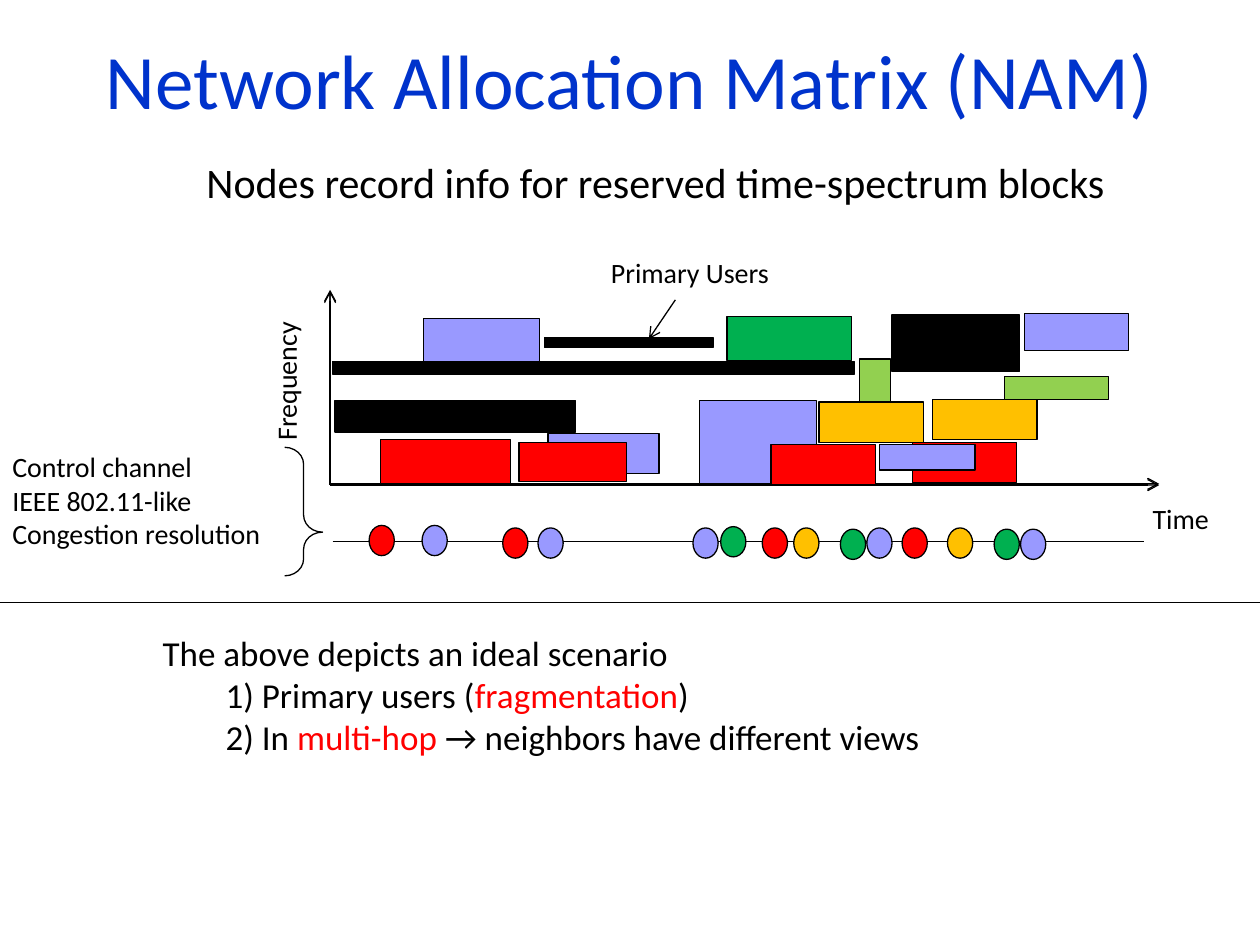
from dataclasses import dataclass

from lxml.etree import SubElement as Sub
from pptx import Presentation as Deck
from pptx.dml.color import RGBColor as Rgb
from pptx.enum.shapes import MSO_CONNECTOR as Link, MSO_SHAPE as Kind
from pptx.enum.text import MSO_ANCHOR as Anchor, MSO_AUTO_SIZE as Fit, PP_ALIGN as Align
from pptx.oxml.ns import qn
from pptx.util import Inches, Pt

HUES = {
    "black": "000000", "blue": "0033CC", "red": "FF0000", "violet": "9999FF",
    "green": "00B050", "lime": "92D050", "gold": "FFC000",
}
PEN = 0.75
FONT = "Calibri"


@dataclass
class Block:
    hue: str
    x: float
    y: float
    w: float
    h: float


@dataclass
class Node:
    hue: str
    x: float
    y: float = 4.19


@dataclass
class Line:
    x1: float
    y1: float
    x2: float
    y2: float
    head: bool = False


@dataclass
class Label:
    lines: list
    x: float
    y: float
    w: float
    h: float
    size: int = 16
    wrap: bool = False
    turn: int = 0


LINES = [
    Line(0, 4.78, 10, 4.78),
    *(Line(2.62, y, *end, True) for y in (3.85, 3.84)
      for end in ((9.2, y), (2.62, y - 1.54))),
    Line(2.64, 4.3, 9.08, 4.3),
]
POINTER = Line(5.36, 2.38, 5.15, 2.69, True)

BLOCKS = [
    Block("red", 3.02, 3.49, 1.03, 0.35),
    Block("violet", 3.36, 2.53, 0.92, 0.34),
    Block("black", 2.66, 3.18, 1.91, 0.25),
    Block("violet", 4.35, 3.44, 0.88, 0.32),
    Block("violet", 5.55, 3.18, 0.93, 0.66),
    Block("green", 5.77, 2.51, 0.99, 0.35),
    Block("gold", 6.5, 3.19, 0.83, 0.32),
    Block("lime", 6.82, 2.85, 0.25, 0.34),
    Block("red", 7.24, 3.51, 0.83, 0.32),
    Block("gold", 7.4, 3.17, 0.83, 0.32),
    Block("violet", 8.13, 2.49, 0.83, 0.29),
    Block("lime", 7.97, 2.99, 0.83, 0.18),
    Block("black", 2.64, 2.87, 4.14, 0.1),
    Block("black", 4.32, 2.68, 1.34, 0.08),
    Block("black", 7.08, 2.5, 1.01, 0.45),
    Block("red", 4.12, 3.51, 0.85, 0.31),
    Block("violet", 6.98, 3.53, 0.76, 0.2),
    Block("red", 6.12, 3.53, 0.83, 0.32),
]

NODES = [
    Node("red", 2.93, 4.17), Node("violet", 3.35, 4.17), Node("red", 3.99),
    Node("violet", 4.27), Node("violet", 5.5), Node("green", 5.72, 4.18),
    Node("red", 6.05), Node("gold", 6.3), Node("green", 6.67, 4.2),
    Node("violet", 6.88), Node("red", 7.16), Node("gold", 7.52),
    Node("green", 7.89, 4.2), Node("violet", 8.1, 4.2),
]

LABELS = [
    Label(["Control channel", "IEEE 802.11-like", "Congestion resolution"],
          0, 3.52, 2.37, 1.02),
    Label(["Time"], 9.05, 3.93, 0.67, 0.37),
    Label(["Primary Users"], 4.75, 1.98, 1.62, 0.37),
    Label(["Nodes record info for reserved time-spectrum blocks"],
          1.54, 1.19, 8.81, 0.5, 24, True),
    Label(["Frequency"], 1.7, 2.84, 1.14, 0.37, turn=270),
]

NOTES = [
    (0, [("The above depicts an ideal scenario", "black")]),
    (1, [("1) Primary users (", "black"), ("fragmentation", "red"), (")", "black")]),
    (1, [("2) In ", "black"), ("multi-hop ", "red"),
         ("→ neighbors have different views", "black")]),
]


def rgb(hue: str) -> Rgb:
    return Rgb.from_string(HUES[hue])


def put(item, vals: dict) -> None:
    for key, val in vals.items():
        setattr(item, key, val)


def box(x: float, y: float, w: float, h: float) -> dict:
    return dict(zip(("left", "top", "width", "height"), map(Inches, (x, y, w, h))))


def write(para, text: str, size: int, hue: str = "black") -> None:
    run = para.add_run()
    run.text = text
    put(run.font, {"name": FONT, "size": Pt(size)})
    run.font.color.rgb = rgb(hue)


def ink(item) -> None:
    item.line.color.rgb = rgb("black")
    item.line.width = Pt(PEN)


def draw_line(tree, line: Line) -> None:
    ends = map(Inches, (line.x1, line.y1, line.x2, line.y2))
    item = tree.add_connector(Link.STRAIGHT, *ends)
    ink(item)
    if line.head:
        Sub(item.line._get_or_add_ln(), qn("a:tailEnd"), type="arrow")
    Sub(item._element.spPr, qn("a:effectLst"))


def draw_shape(tree, kind: Kind, area: Block):
    item = tree.add_shape(kind, **box(area.x, area.y, area.w, area.h))
    item.shadow.inherit = False
    ink(item)
    if area.hue:
        item.fill.solid()
        item.fill.fore_color.rgb = rgb(area.hue)
    else:
        item.fill.background()
    return item


def draw_label(tree, label: Label) -> None:
    item = tree.add_textbox(**box(label.x, label.y, label.w, label.h))
    item.rotation = label.turn
    frame = item.text_frame
    put(frame, {"word_wrap": label.wrap, "auto_size": Fit.SHAPE_TO_FIT_TEXT})
    for i, text in enumerate(label.lines):
        para = frame.add_paragraph() if i else frame.paragraphs[0]
        write(para, text, label.size)


def fill_title(item) -> None:
    put(item, box(0.5, 0, 9, 1.25))
    put(item.text_frame, {"vertical_anchor": Anchor.MIDDLE, "auto_size": Fit.NONE})
    para = item.text_frame.paragraphs[0]
    para.alignment = Align.CENTER
    write(para, "Network Allocation Matrix (NAM)", 44, "blue")


def fill_body(item) -> None:
    put(item, box(1.19, 4.96, 8.81, 1.11))
    frame = item.text_frame
    put(frame, {"vertical_anchor": Anchor.TOP, "auto_size": Fit.NONE})
    for i, (level, runs) in enumerate(NOTES):
        para = frame.add_paragraph() if i else frame.paragraphs[0]
        put(para, {"level": level, "space_before": Pt(0), "alignment": Align.LEFT})
        props = para._p.get_or_add_pPr()
        props.set("marL", str(Inches(0.5 * level)))
        props.set("indent", "0")
        Sub(props, qn("a:buNone"))
        for text, hue in runs:
            write(para, text, 20, hue)


def main() -> None:
    deck = Deck()
    put(deck, {"slide_width": Inches(10), "slide_height": Inches(7.5)})
    slide = deck.slides.add_slide(deck.slide_layouts[1])
    tree = slide.shapes
    fill_title(tree.title)
    fill_body(slide.placeholders[1])
    for line in LINES:
        draw_line(tree, line)
    brace = draw_shape(tree, Kind.RIGHT_BRACE, Block("", 2.26, 3.55, 0.3, 1.02))
    brace.adjustments[0] = 0.45
    brace.adjustments[1] = 0.66
    for node in NODES:
        draw_shape(tree, Kind.OVAL, Block(node.hue, node.x, node.y, 0.2, 0.24))
    for block in BLOCKS:
        draw_shape(tree, Kind.RECTANGLE, block)
    draw_line(tree, POINTER)
    for label in LABELS:
        draw_label(tree, label)
    deck.save("out.pptx")


if __name__ == "__main__":
    main()
